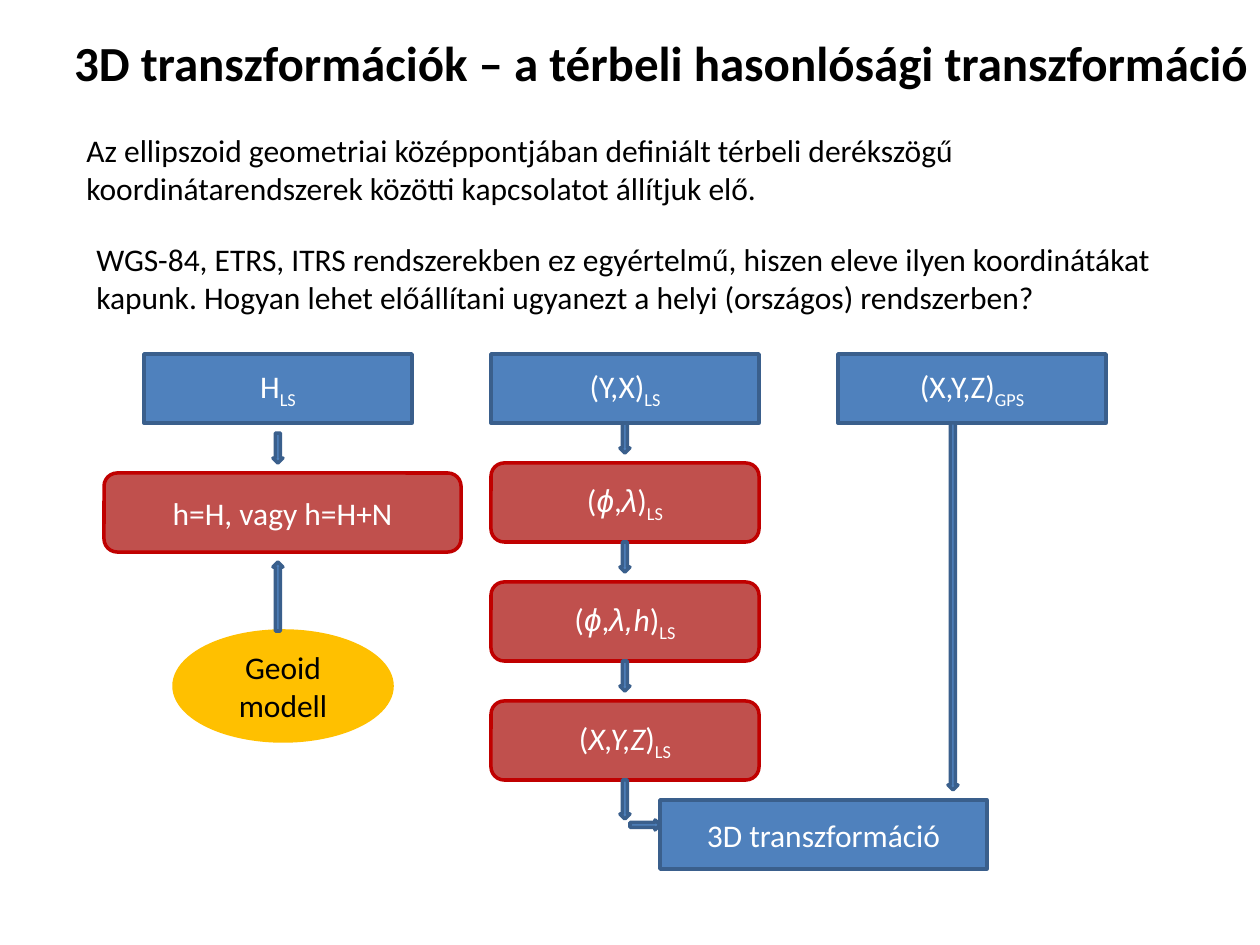
from dataclasses import dataclass

from pptx import Presentation
from pptx import util as u
from pptx.dml import color
from pptx.enum import shapes, text

PX = u.Inches(1) / 126  # EMU in one px


@dataclass(frozen=True)
class Theme:
    blue: str = "4F81BD"
    blue_edge: str = "3A5F8C"
    red: str = "C0504D"
    red_edge: str = "C00000"
    amber: str = "FFC000"
    black: str = "000000"
    white: str = "FFFFFF"
    font: str = "Calibri"
    symbol_font: str = "Arial"
    title_size: int = 28
    body_size: int = 18
    edge_width: int = 2


THEME = Theme()


@dataclass(frozen=True)
class Box:
    left: int
    top: int
    width: int
    height: int

    def emu(self) -> list[int]:
        return [round(n * PX) for n in (self.left, self.top, self.width, self.height)]


@dataclass(frozen=True)
class Run:
    text: str
    italic: bool = False
    symbol: bool = False
    subscript: bool = False


@dataclass(frozen=True)
class Style:
    preset: shapes.MSO_SHAPE
    fill: str
    edge: str
    ink: str = THEME.white


@dataclass(frozen=True)
class Node:
    box: Box
    style: Style
    runs: tuple[Run, ...]


@dataclass(frozen=True)
class Note:
    box: Box
    text: str
    size: int = THEME.body_size
    bold: bool = False
    align: text.PP_ALIGN = text.PP_ALIGN.LEFT


def rgb(value: str) -> color.RGBColor:
    return color.RGBColor.from_string(value)


def style_paragraph(paragraph, size: int, ink: str, align: text.PP_ALIGN) -> None:
    paragraph.alignment = align
    paragraph.font.name = THEME.font
    paragraph.font.size = u.Pt(size)
    paragraph.font.color.rgb = rgb(ink)


def draw_note(slide, note: Note) -> None:
    shape = slide.shapes.add_textbox(*note.box.emu())
    frame = shape.text_frame
    frame.word_wrap = True
    frame.auto_size = text.MSO_AUTO_SIZE.SHAPE_TO_FIT_TEXT
    paragraph = frame.paragraphs[0]
    paragraph.add_run().text = note.text
    style_paragraph(paragraph, note.size, THEME.black, note.align)
    paragraph.font.bold = note.bold


def draw_shape(slide, box: Box, style: Style):
    shape = slide.shapes.add_shape(style.preset, *box.emu())
    shape.shadow.inherit = False
    shape.fill.solid()
    shape.fill.fore_color.rgb = rgb(style.fill)
    shape.line.color.rgb = rgb(style.edge)
    shape.line.width = u.Pt(THEME.edge_width)
    return shape


def draw_node(slide, node: Node) -> None:
    frame = draw_shape(slide, node.box, node.style).text_frame
    frame.word_wrap = True
    frame.vertical_anchor = text.MSO_ANCHOR.MIDDLE
    paragraph = frame.paragraphs[0]
    style_paragraph(paragraph, THEME.body_size, node.style.ink, text.PP_ALIGN.CENTER)
    for part in node.runs:
        run = paragraph.add_run()
        run.text = part.text
        if part.italic:
            run.font.italic = True
        if part.symbol:
            run.font.name = THEME.symbol_font
        if part.subscript:
            run._r.get_or_add_rPr().set("baseline", "-25000")


def symbol(value: str) -> Run:
    return Run(value, italic=True, symbol=True)


def sub(value: str) -> Run:
    return Run(value, subscript=True)


# Shape styles
PRESET = shapes.MSO_SHAPE
SYSTEM = Style(PRESET.RECTANGLE, THEME.blue, THEME.blue_edge)
STEP = Style(PRESET.ROUNDED_RECTANGLE, THEME.red, THEME.red_edge)
MODEL = Style(PRESET.OVAL, THEME.amber, THEME.amber, THEME.black)
DOWN, UP, RIGHT = (
    Style(preset, THEME.blue, THEME.blue_edge)
    for preset in (PRESET.DOWN_ARROW, PRESET.UP_ARROW, PRESET.RIGHT_ARROW)
)

# Diagram grid
COLUMNS = [144 + 347 * i for i in range(3)]
ROWS = [463 + 119 * i for i in range(3)]
NODE_WIDTH, SYSTEM_HEIGHT, STEP_HEIGHT = 268, 69, 79
SYSTEM_TOP = 354
SYSTEM_BOTTOM = SYSTEM_TOP + SYSTEM_HEIGHT
ARROW_WIDTH, ARROW_LENGTH = 10, 30
HEIGHT_X, CHAIN_X, GPS_X = 273, 620, 948  # left edges of the arrows

NOTES = [
    Note(Box(35, 26, 1225, 72), "3D transzformációk – a térbeli hasonlósági transzformáció",
         THEME.title_size, True, text.PP_ALIGN.RIGHT),
    Note(Box(74, 125, 1111, 89), "Az ellipszoid geometriai középpontjában definiált térbeli "
         "derékszögű koordinátarendszerek közötti kapcsolatot állítjuk elő."),
    Note(Box(84, 234, 1111, 89), "WGS-84, ETRS, ITRS rendszerekben ez egyértelmű, hiszen eleve "
         "ilyen koordinátákat kapunk. Hogyan lehet előállítani ugyanezt a helyi (országos) "
         "rendszerben?"),
]

SYSTEM_LABELS = [("H", "LS"), ("(Y,X)", "LS"), ("(X,Y,Z)", "GPS")]
STEP_LABELS = [
    (symbol("ϕ"), Run(","), symbol("λ")),
    (symbol("ϕ"), Run(","), symbol("λ,"), Run("h", italic=True)),
    (Run("X,Y,Z", italic=True),),
]

NODES = [
    *(Node(Box(left, SYSTEM_TOP, NODE_WIDTH, SYSTEM_HEIGHT), SYSTEM, (Run(name), sub(index)))
      for left, (name, index) in zip(COLUMNS, SYSTEM_LABELS)),
    Node(Box(104, 473, 357, STEP_HEIGHT), STEP, (Run("h=H, vagy h=H+N"),)),
    *(Node(Box(COLUMNS[1], top, NODE_WIDTH, STEP_HEIGHT), STEP,
           (Run("("), *label, Run(")"), sub("LS")))
      for top, label in zip(ROWS, STEP_LABELS)),
    Node(Box(174, 631, 218, 110), MODEL, (Run("Geoid modell"),)),
    Node(Box(660, 800, 327, SYSTEM_HEIGHT), SYSTEM, (Run("3D transzformáció"),)),
]

CHAIN_TOPS = [SYSTEM_BOTTOM, *(top + STEP_HEIGHT for top in ROWS[:2])]
ARROWS = [
    (Box(HEIGHT_X, 433, ARROW_WIDTH, ARROW_LENGTH), DOWN),
    *((Box(CHAIN_X, top, ARROW_WIDTH, ARROW_LENGTH), DOWN) for top in CHAIN_TOPS),
    (Box(HEIGHT_X, 562, ARROW_WIDTH, 69), UP),
    (Box(GPS_X, SYSTEM_BOTTOM, ARROW_WIDTH, 367), DOWN),
    (Box(630, 820, ARROW_LENGTH, ARROW_WIDTH), RIGHT),
    (Box(CHAIN_X, ROWS[2] + STEP_HEIGHT, ARROW_WIDTH, 39), DOWN),
]


def main() -> None:
    presentation = Presentation()
    presentation.slide_width = u.Inches(10)
    presentation.slide_height = u.Inches(7.5)
    slide = presentation.slides.add_slide(presentation.slide_layouts[6])
    # Title and explanation
    for note in NOTES:
        draw_note(slide, note)
    # Flow chart
    for node in NODES:
        draw_node(slide, node)
    for box, style in ARROWS:
        draw_shape(slide, box, style)
    presentation.save("out.pptx")


if __name__ == "__main__":
    main()
